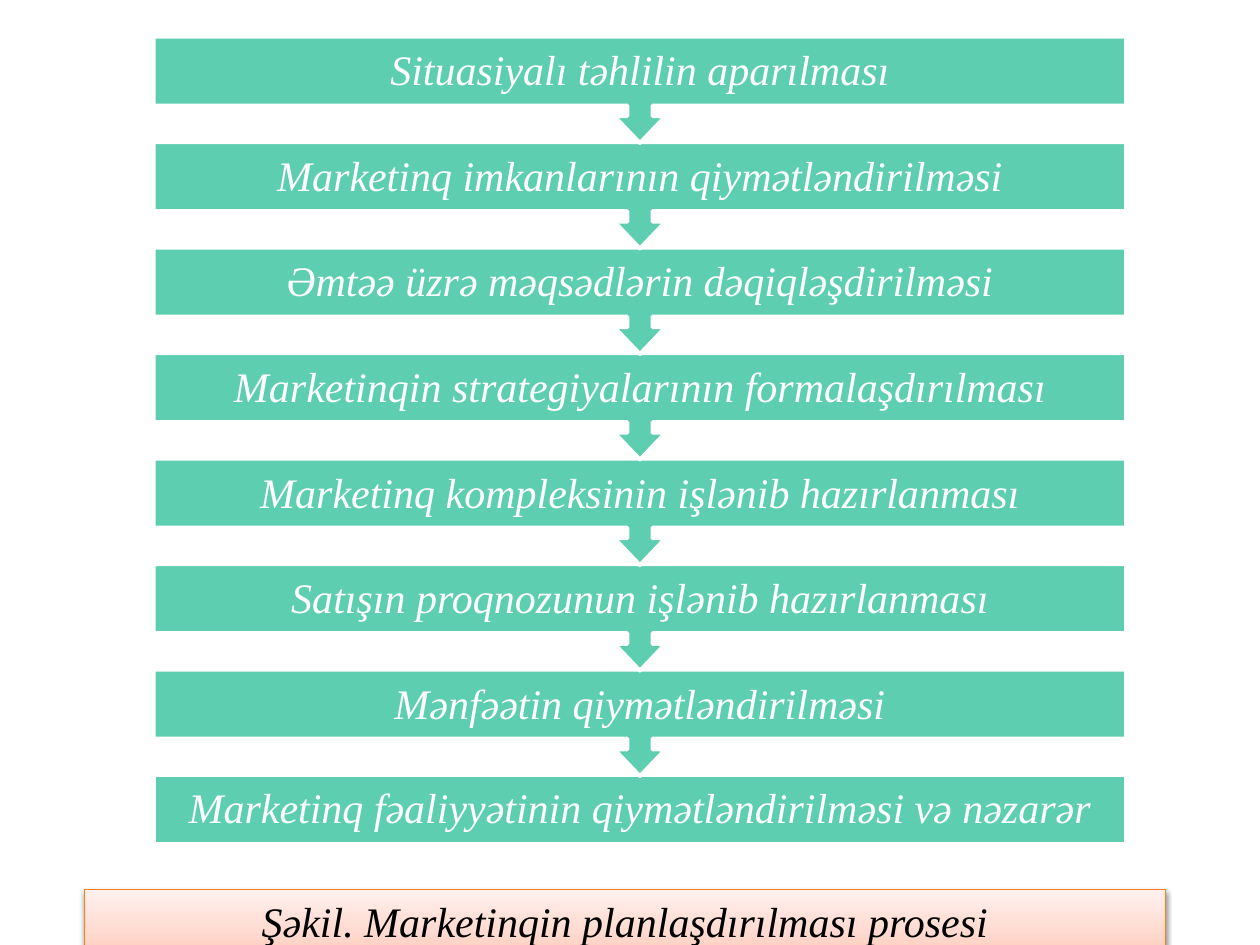
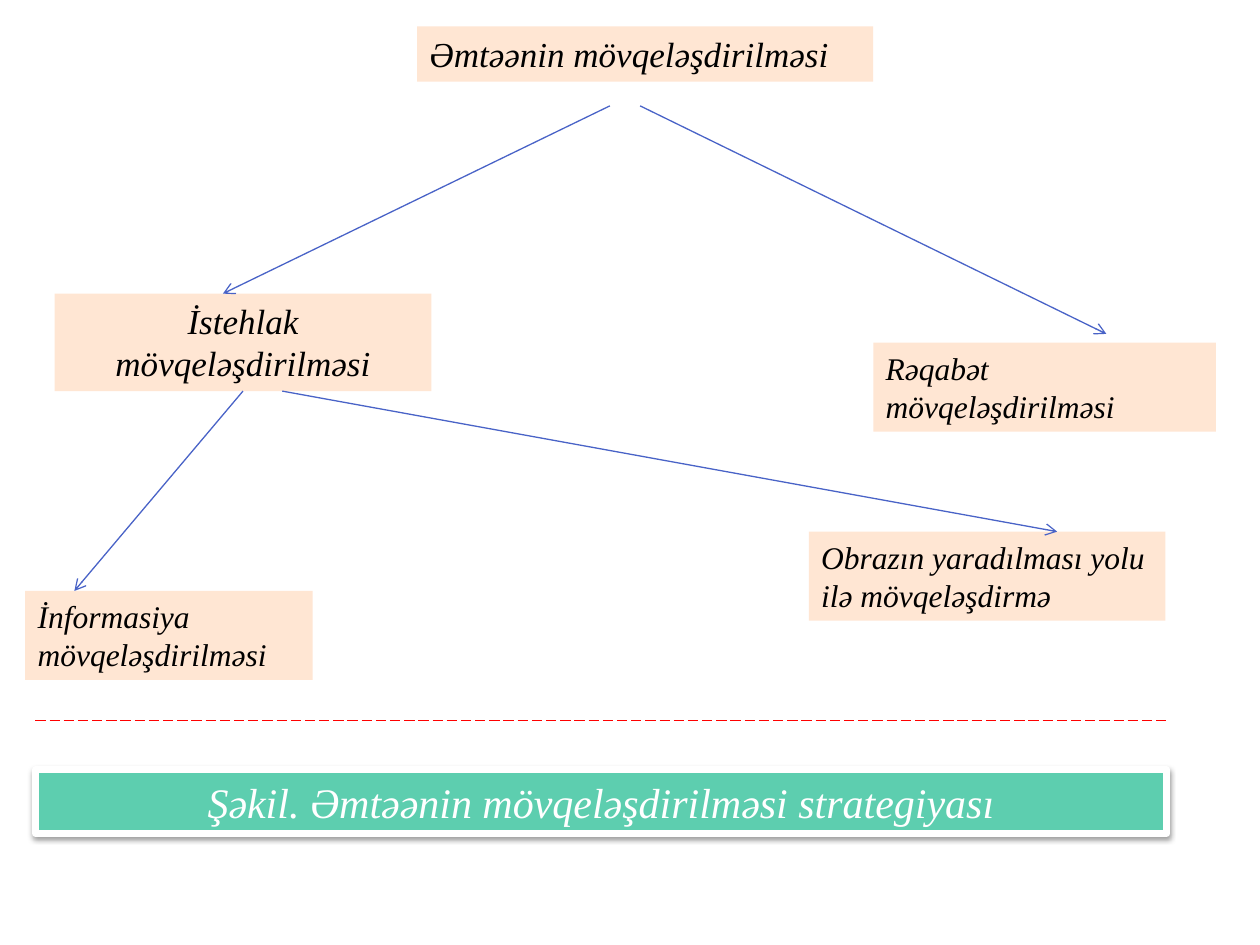
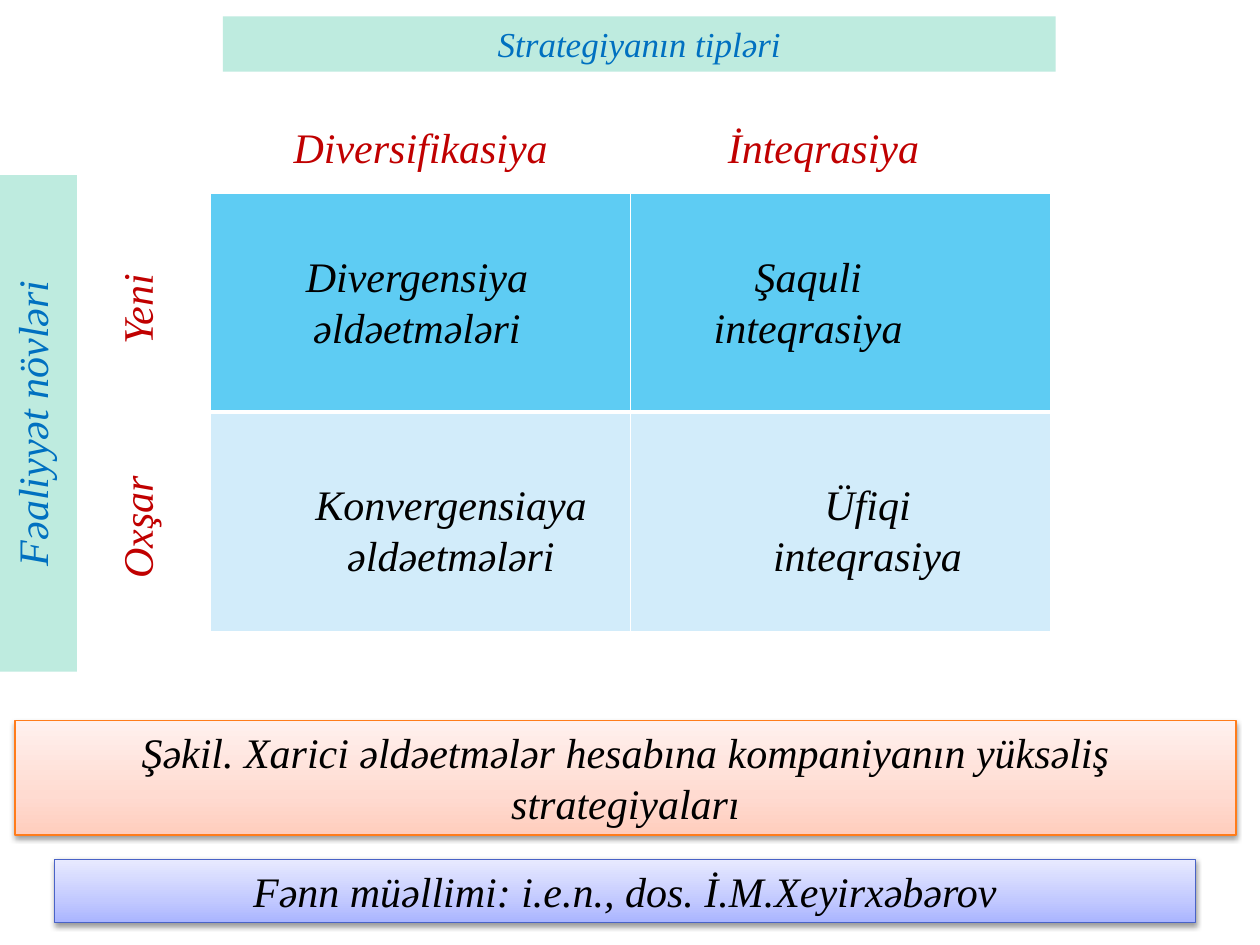
"""Build three slides on marketing planning and positioning strategies."""
from copy import deepcopy

from lxml import etree
from pptx import Presentation
from pptx.dml.color import RGBColor
from pptx.enum.dml import MSO_LINE
from pptx.enum.shapes import MSO_CONNECTOR, MSO_SHAPE
from pptx.enum.text import MSO_ANCHOR, MSO_AUTO_SIZE, PP_ALIGN
from pptx.oxml.ns import qn
from pptx.util import Pt

RECT = MSO_SHAPE.RECTANGLE
STRAIGHT = MSO_CONNECTOR.STRAIGHT
LONG_DASH = MSO_LINE.LONG_DASH
LEFT, CENTER = PP_ALIGN.LEFT, PP_ALIGN.CENTER
TOP, MIDDLE = MSO_ANCHOR.TOP, MSO_ANCHOR.MIDDLE
FIT = MSO_AUTO_SIZE.SHAPE_TO_FIT_TEXT
BOTTOM_SIDE = 2

FONT = "Times New Roman"
COLORS = {
    "white": "FFFFFF", "black": "000000", "green": "5DCEAF", "mint": "BEEBDF",
    "peach": "FFE6D3", "arrow": "4963C7", "divider": "FF0000",
    "axis": "0070C0", "label": "C00000", "sky": "5ECCF3", "pale": "D2ECFA",
    "orange": "FF7C1B",
}
GRADIENTS = {
    "orange": ("FFCDBD", "FFDBD1", "FFF1EE"),
    "arrow": ("A9B4FF", "C2C9FF", "E8EAFF"),
}
STOPS = (0, 0.35, 1)
ONE_LINE, TWO_LINES = 36.35, 65.4


def rgb(name):
    return RGBColor.from_string(COLORS[name])


class Deck:
    """Holds the style and the current slide."""

    def __init__(self):
        self.prs = Presentation()
        self.prs.slide_width, self.prs.slide_height = Pt(720), Pt(540)
        self.s = None

    def new_slide(self):
        self.s = self.prs.slides.add_slide(self.prs.slide_layouts[6])

    def set_text(self, sp, text, size=24, color="black", align=CENTER, anchor=TOP, vertical=False):
        tf = sp.text_frame
        tf.word_wrap = True
        tf.vertical_anchor = anchor
        tf.text = text
        p = tf.paragraphs[0]
        p.alignment = align
        p.font.name, p.font.size, p.font.italic = FONT, Pt(size), True
        p.font.color.rgb = rgb(color)
        if vertical:
            sp.element.txBody.bodyPr.set("vert", "vert270")
        return tf

    def paint(self, sp, fill, line=None, width=0.75):
        sp.shadow.inherit = False
        sp.fill.solid()
        sp.fill.fore_color.rgb = rgb(fill)
        if line:
            sp.line.color.rgb = rgb(line)
            sp.line.width = Pt(width)
        else:
            sp.line.fill.background()

    def box(self, text, x, y, w, h, fill, line=None, width=0.75, **style):
        sp = self.s.shapes.add_shape(RECT, Pt(x), Pt(y), Pt(w), Pt(h))
        self.paint(sp, fill, line, width)
        self.set_text(sp, text, **style).auto_size = FIT
        return sp

    def label(self, text, x, y, w, h, **style):
        sp = self.s.shapes.add_textbox(Pt(x), Pt(y), Pt(w), Pt(h))
        self.set_text(sp, text, **style).auto_size = FIT

    def add_shadow(self, sp):
        effects = sp.element.spPr.find(qn("a:effectLst"))
        shadow = etree.SubElement(effects, qn("a:outerShdw"), blurRad=str(Pt(3.1)),
                                  dist=str(Pt(1.6)), dir="5400000", rotWithShape="0")
        color = etree.SubElement(shadow, qn("a:srgbClr"), val=COLORS["black"])
        etree.SubElement(color, qn("a:alpha"), val="38000")

    def caption(self, text, x, y, w, h=ONE_LINE, tone="orange"):
        sp = self.box(text, x, y, w, h, tone, tone)
        sp.fill.gradient()
        sp.fill.gradient_angle = 90
        stop_list = sp.element.spPr.find(qn("a:gradFill")).find(qn("a:gsLst"))
        stop_list.append(deepcopy(stop_list[0]))
        for stop, position, color in zip(sp.fill.gradient_stops, STOPS, GRADIENTS[tone]):
            stop.position = position
            stop.color.rgb = RGBColor.from_string(color)
        self.add_shadow(sp)

    def step(self, text, x, y, w, h, arrow):
        mid, bottom = x + w / 2, y + h
        points = [(x + w, y), (x + w, bottom)]
        if arrow:
            neck = bottom + 6.1
            points += [(mid + 7.2, bottom), (mid + 7.2, neck), (mid + 14.6, neck),
                       (mid, bottom + 21.4), (mid - 14.6, neck), (mid - 7.2, neck),
                       (mid - 7.2, bottom)]
        points.append((x, bottom))
        builder = self.s.shapes.build_freeform(Pt(x), Pt(y))
        builder.add_line_segments([(Pt(px), Pt(py)) for px, py in points])
        sp = builder.convert_to_shape()
        self.paint(sp, "green", "white", 2.25)
        tf = self.set_text(sp, text, color="white", anchor=MIDDLE)
        tf.margin_left = tf.margin_right = tf.margin_top = Pt(10)
        tf.margin_bottom = Pt(30 if arrow else 10)
        tf.paragraphs[0].line_spacing = 0.9

    def line(self, x1, y1, x2, y2, color="arrow", dashed=False):
        cn = self.s.shapes.add_connector(STRAIGHT, Pt(x1), Pt(y1), Pt(x2), Pt(y2))
        cn.line.color.rgb = rgb(color)
        cn.line.width = Pt(0.75)
        if dashed:
            cn.line.dash_style = LONG_DASH
        else:
            etree.SubElement(cn.element.spPr.find(qn("a:ln")), qn("a:tailEnd"), type="arrow")
        etree.SubElement(cn.element.spPr, qn("a:effectLst"))
        return cn

    def border(self, cell, **widths):
        tc_pr = cell._tc.get_or_add_tcPr()
        for side in "LRTB":
            ln = etree.SubElement(tc_pr, qn(f"a:ln{side}"), w=str(Pt(widths.get(side, 1))))
            fill = etree.SubElement(ln, qn("a:solidFill"))
            etree.SubElement(fill, qn("a:srgbClr"), val=COLORS["white"])

    def matrix(self, x, y, w, h, row_fills):
        table = self.s.shapes.add_table(len(row_fills), 2, Pt(x), Pt(y), Pt(w), Pt(h)).table
        edges = ({"B": 3}, {"T": 3})
        for row, fill, edge in zip(table.rows, row_fills, edges):
            for cell in row.cells:
                self.border(cell, **edge)
                cell.fill.solid()
                cell.fill.fore_color.rgb = rgb(fill)


def planning_slide(deck):
    deck.new_slide()
    steps = (
        "Situasiyalı təhlilin aparılması",
        "Marketinq imkanlarının qiymətləndirilməsi",
        "Əmtəə üzrə məqsədlərin dəqiqləşdirilməsi",
        "Marketinqin strategiyalarının formalaşdırılması",
        "Marketinq kompleksinin işlənib hazırlanması",
        "Satışın proqnozunun işlənib hazırlanması",
        "Mənfəətin qiymətləndirilməsi",
        "Marketinq fəaliyyətinin qiymətləndirilməsi və nəzarər",
    )
    last = len(steps) - 1
    for i in range(last, -1, -1):
        deck.step(steps[i], 87.9, 20.9 + i * 60.3, 555.6, 39.4, arrow=i < last)
    deck.caption("Şəkil. Marketinqin planlaşdırılması prosesi", 48.2, 508.3, 617.8)


def positioning_slide(deck):
    deck.new_slide()
    deck.box("Əmtəənin mövqeləşdirilməsi", 238.3, 15.1, 260.6, 31.5, "peach",
             size=20, align=LEFT)
    consumer = deck.box("İstehlak mövqeləşdirilməsi", 31.2, 167.8, 215.3, 55.7, "peach", size=20)
    for text, x, y, w in (
        ("Rəqabət mövqeləşdirilməsi", 499, 195.8, 195.8),
        ("İnformasiya mövqeləşdirilməsi", 14.4, 337.7, 164.2),
        ("Obrazın yaradılması yolu ilə mövqeləşdirmə", 462.2, 303.8, 203.8),
    ):
        deck.box(text, x, y, w, 50.9, "peach", size=18, align=LEFT)
    deck.line(348.5, 60.5, 127.4, 167.8)
    deck.line(365.8, 60.5, 632.2, 190.8)
    deck.line(138.9, 223.5, 42.5, 337.7).begin_connect(consumer, BOTTOM_SIDE)
    deck.line(161.3, 223.5, 604.1, 303.8)
    sp = deck.box("Şəkil. Əmtəənin mövqeləşdirilməsi strategiyası", 20.2, 439.9, 646.6,
                  ONE_LINE, "green", "white", 4, color="white")
    deck.add_shadow(sp)
    deck.line(20.2, 411.8, 666, 411.8, "divider", dashed=True)


def growth_slide(deck):
    deck.new_slide()
    deck.matrix(120.2, 110.2, 480.2, 250.6, ("sky", "pale"))
    deck.box("Strategiyanın tipləri", 127.4, 9.4, 475.9, 31.5, "mint", size=20, color="axis")
    deck.box("Fəaliyyət növləri", 0, 100.1, 43.9, 283.7, "mint", color="axis", vertical=True)
    for text, x, w in (("Diversifikasiya", 115.9, 249.1), ("İnteqrasiya", 351.4, 238.3)):
        deck.label(text, x, 66.2, w, ONE_LINE, color="label")
    for text, y, h in (("Yeni", 111.6, 130.3), ("Oxşar", 241.9, 118.8)):
        deck.label(text, 59.8, y, 43.9, h, color="label", vertical=True)
    for text, x, y, w in (
        ("Divergensiya əldəetmələri", 144.7, 139.7, 187.2),
        ("Şaquli inteqrasiya", 393.8, 139.7, 136.1),
        ("Konvergensiaya əldəetmələri", 172.8, 270, 169.9),
        ("Üfiqi inteqrasiya", 427.7, 270, 136.1),
    ):
        deck.label(text, x, y, w, TWO_LINES)
    deck.caption("Şəkil. Xarici əldəetmələr hesabına kompaniyanın yüksəliş strategiyaları",
                 8.6, 411.8, 697.7, TWO_LINES)
    deck.caption("Fənn müəllimi: i.e.n., dos. İ.M.Xeyirxəbərov", 31, 491, 652.3, tone="arrow")


def main():
    deck = Deck()
    planning_slide(deck)
    positioning_slide(deck)
    growth_slide(deck)
    deck.prs.save("out.pptx")


if __name__ == "__main__":
    main()
